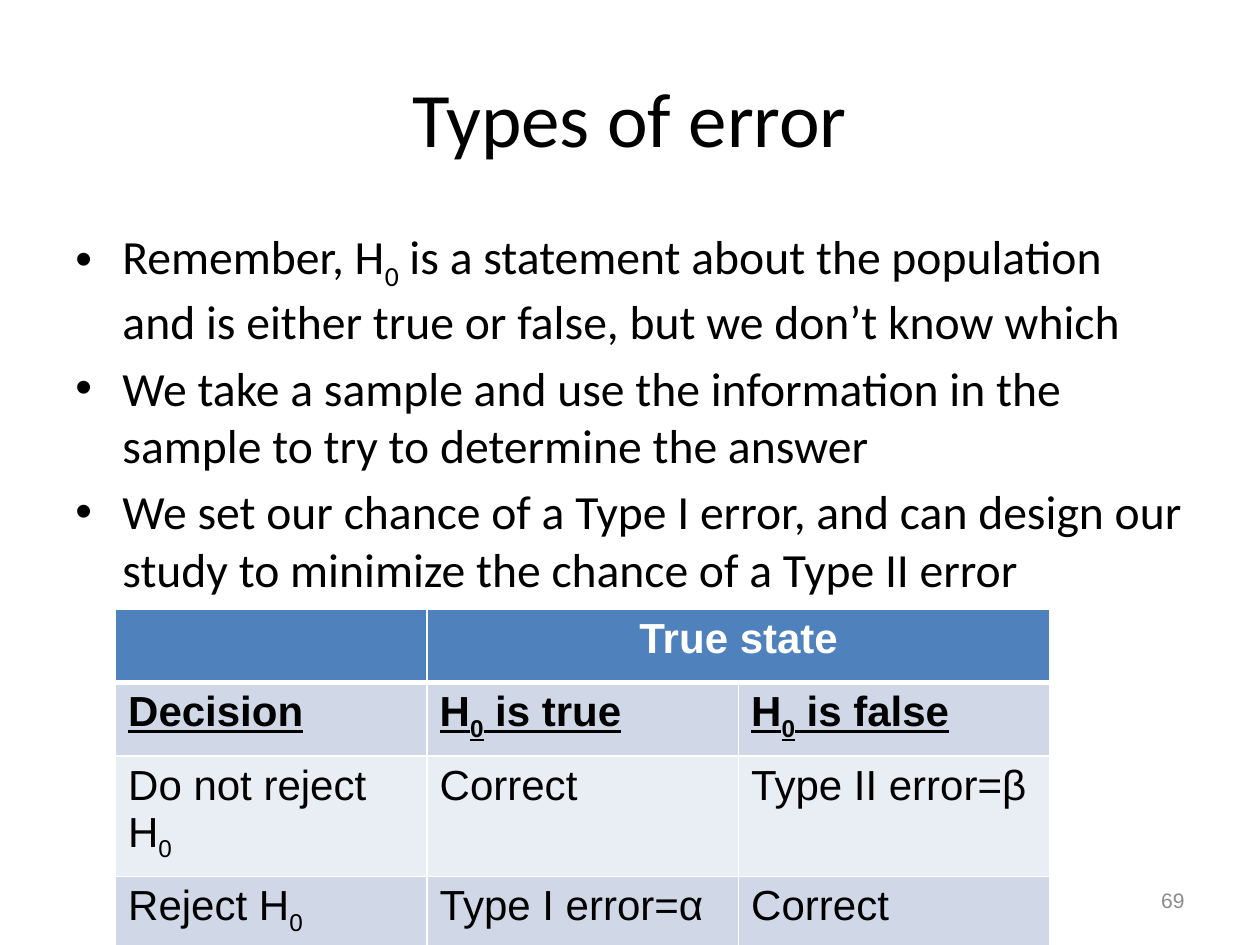
import pptx
import pptx.util
import pptx.dml.color
import pptx.enum.text
import pptx.oxml
import pptx.oxml.ns

Cm, Pt = pptx.util.Cm, pptx.util.Pt
ALIGN = pptx.enum.text.PP_ALIGN
MIDDLE = pptx.enum.text.MSO_ANCHOR.MIDDLE

TITLE = "Types of error"
POINTS = [
    "Remember, H_0_ is a statement about the population and is either true or false, but we don’t know which",
    "We take a sample and use the information in the sample to try to determine the answer",
    "We set our chance of a Type I error, and can design our study to minimize the chance of a Type II error",
]
ROWS = [
    ("", "True state", ""),
    ("Decision", "H_0_ is true", "H_0_ is false"),
    ("Do not reject H_0", "Correct", "Type II error=β"),
    ("Reject H_0", "Type I error=α", "Correct"),
]
FILLS = ["4F81BD", "D0D8E8", "E9EDF4", "D0D8E8"]
NUMBER = "69"


def color(value):
    return pptx.dml.color.RGBColor.from_string(value)


def write(para, text, face, size, ink, bold=False, under=False):
    for i, part in enumerate(text.split("_")):
        if not part:
            continue
        run = para.add_run()
        run.text = part
        font = run.font
        font.name, font.size = face, Pt(size)
        font.bold, font.underline = bold, under
        font.color.rgb = color(ink)
        if i % 2:
            run._r.get_or_add_rPr().set("baseline", "-25000")


def bullet(para):
    props = para._p.get_or_add_pPr()
    props.set("marL", str(Cm(0.95)))
    props.set("indent", str(-Cm(0.95)))
    ns = pptx.oxml.ns.nsdecls("a")
    props.append(pptx.oxml.parse_xml(f'<a:buFont {ns} typeface="Arial"/>'))
    props.append(pptx.oxml.parse_xml(f'<a:buChar {ns} char="•"/>'))


def border(cell, widths):
    props = cell._tc.get_or_add_tcPr()
    for side, width in zip("LRTB", widths):
        props.append(pptx.oxml.parse_xml(
            f'<a:ln{side} {pptx.oxml.ns.nsdecls("a")} w="{Pt(width)}">'
            f'<a:solidFill><a:srgbClr val="FFFFFF"/></a:solidFill></a:ln{side}>'))


def add_title(slide):
    title = slide.shapes.title
    title.left, title.top, title.width, title.height = Cm(1.27), Cm(0.76), Cm(22.86), Cm(3.18)
    frame = title.text_frame
    frame.vertical_anchor = MIDDLE
    para = frame.paragraphs[0]
    para.alignment = ALIGN.CENTER
    write(para, TITLE, "Calibri", 44, "000000")


def add_points(slide):
    frame = slide.shapes.add_textbox(Cm(1.27), Cm(4.45), Cm(22.86), Cm(8.05)).text_frame
    frame.word_wrap = True
    for i, text in enumerate(POINTS):
        para = frame.add_paragraph() if i else frame.paragraphs[0]
        para.space_before = Pt(5.4)
        bullet(para)
        write(para, text, "Calibri", 27.2, "000000")


def add_grid(slide):
    grid = slide.shapes.add_table(
        len(ROWS), 3, Cm(2.33), Cm(12.28), Cm(18.84), Cm(5.92)).table
    for col in grid.columns:
        col.width = Cm(6.28)
    for row in grid.rows:
        row.height = Cm(1.48)
    for r, texts in enumerate(ROWS):
        for c, text in enumerate(texts):
            cell = grid.cell(r, c)
            border(cell, (1, 1, 3 if r == 1 else 1, 3 if r == 0 else 1))
            cell.fill.solid()
            cell.fill.fore_color.rgb = color(FILLS[r])
            para = cell.text_frame.paragraphs[0]
            if r == 0:
                para.alignment = ALIGN.CENTER
            write(para, text, "Arial", 24, "000000" if r else "FFFFFF", r < 2, r == 1)
    grid.cell(0, 1).merge(grid.cell(0, 2))


def add_number(slide):
    frame = slide.shapes.add_textbox(Cm(18.2), Cm(17.65), Cm(5.93), Cm(1.01)).text_frame
    frame.word_wrap = True
    frame.vertical_anchor = MIDDLE
    para = frame.paragraphs[0]
    para.alignment = ALIGN.RIGHT
    write(para, NUMBER, "Arial", 12, "8C8C8C")


def main():
    deck = pptx.Presentation()
    deck.slide_width, deck.slide_height = Cm(25.4), Cm(19.05)
    slide = deck.slides.add_slide(deck.slide_layouts[5])
    add_title(slide)
    add_points(slide)
    add_number(slide)
    add_grid(slide)
    deck.save("out.pptx")


if __name__ == "__main__":
    main()
